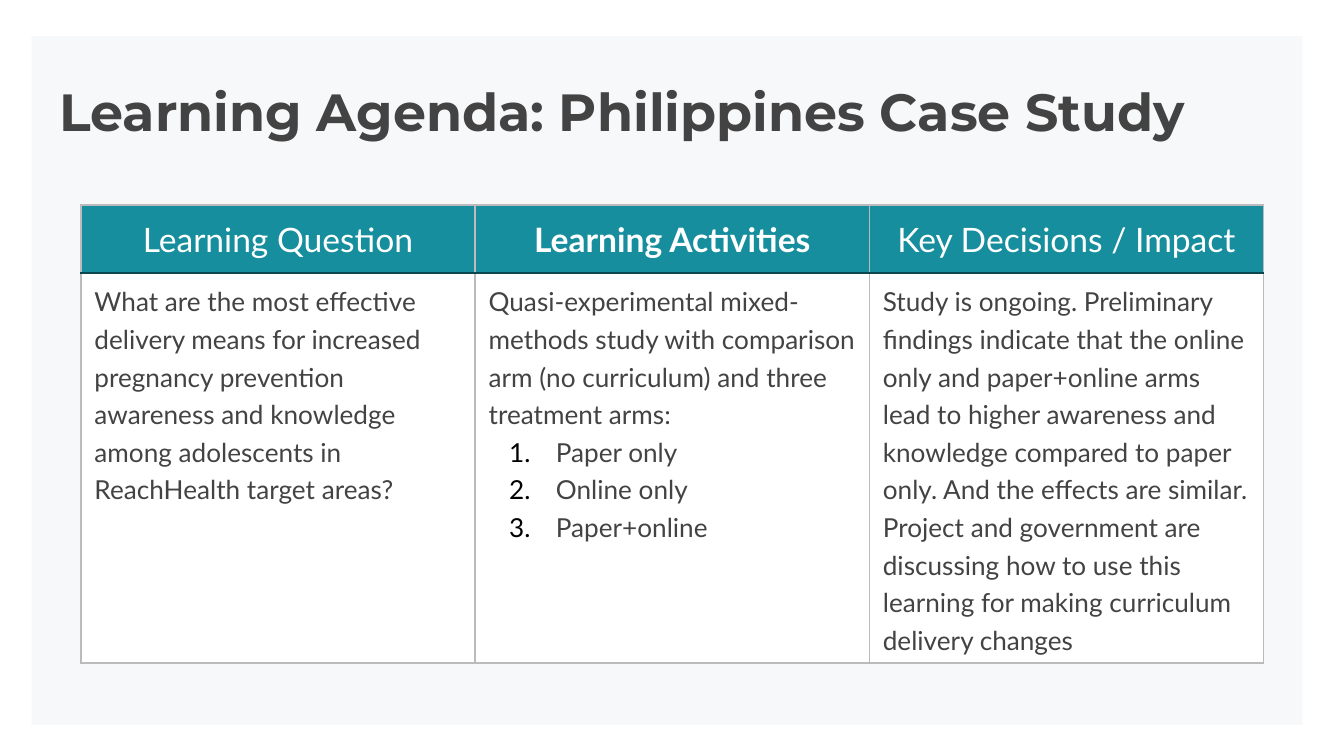
from lxml.etree import SubElement
from pptx import Presentation
from pptx.dml.color import RGBColor
from pptx.enum.shapes import MSO_SHAPE
from pptx.enum.text import MSO_ANCHOR, PP_ALIGN
from pptx.oxml import parse_xml
from pptx.oxml.ns import nsdecls, qn
from pptx.util import Pt

HEADERS = [("Learning Question", False), ("Learning Activities", True),
           ("Key Decisions / Impact", False)]
QUESTION = ("What are the most effective delivery means for increased pregnancy "
            "prevention awareness and knowledge among adolescents in ReachHealth "
            "target areas?")
ACTIVITIES = ("Quasi-experimental mixed-methods study with comparison arm "
              "(no curriculum) and three treatment arms:")
ARMS = ["Paper only", "Online only", "Paper+online"]
IMPACT = ("Study is ongoing. Preliminary findings indicate that the online only and "
          "paper+online arms lead to higher awareness and knowledge compared to paper "
          "only. And the effects are similar. Project and government are discussing "
          "how to use this learning for making curriculum delivery changes")


def color(hex_code):
    return RGBColor.from_string(hex_code)


def write(paragraph, text, *, font, size, ink, bold=False, align=PP_ALIGN.LEFT,
          spacing=None, numbered=False):
    if numbered:
        properties = paragraph._p.get_or_add_pPr()
        properties.set("marL", str(Pt(36)))
        properties.set("indent", str(-Pt(25)))
        bullet_color = SubElement(properties, qn("a:buClr"))
        SubElement(bullet_color, qn("a:srgbClr"), val="000000")
        SubElement(properties, qn("a:buFont"), typeface=font)
        SubElement(properties, qn("a:buAutoNum"), type="arabicPeriod")
    paragraph.alignment = align
    if spacing:
        paragraph.line_spacing = spacing
    run = paragraph.add_run()
    run.text = text
    run.font.name, run.font.size, run.font.bold = font, Pt(size), bold
    run.font.color.rgb = color(ink)


class LearningAgendaSlide:
    INK, TEAL, DEEP_TEAL, GRID = "434343", "168E9E", "0A474F", "BBBBBD"
    HEADING_FONT, BODY_FONT = "Montserrat", "Lato"

    def __init__(self, presentation):
        self.slide = presentation.slides.add_slide(presentation.slide_layouts[6])

    def panel(self, left, top, width, height):
        shape = self.slide.shapes.add_shape(
            MSO_SHAPE.RECTANGLE, Pt(left), Pt(top), Pt(width), Pt(height))
        shape.shadow.inherit = False
        shape.line.fill.background()
        shape.fill.solid()
        shape.fill.fore_color.rgb = color("073763")
        fill_color = shape._element.spPr.find(".//" + qn("a:srgbClr"))
        SubElement(fill_color, qn("a:alpha"), val="3000")

    def title(self, text, left, top, width, height):
        frame = self.slide.shapes.add_textbox(
            Pt(left), Pt(top), Pt(width), Pt(height)).text_frame
        frame.word_wrap = True
        frame.margin_left = frame.margin_right = Pt(7.2)
        frame.margin_top = frame.margin_bottom = Pt(7.2)
        write(frame.paragraphs[0], text, font=self.HEADING_FONT, size=28,
              ink=self.INK, bold=True)

    def table(self, left, top, width, row_heights, columns):
        table = self.slide.shapes.add_table(
            len(row_heights), columns, Pt(left), Pt(top), Pt(width),
            Pt(sum(row_heights))).table
        table.first_row = table.horz_banding = False
        for row, height in zip(table.rows, row_heights):
            row.height = Pt(height)
        return table

    def style_cell(self, cell, fill, **edges):
        """Fill the cell and draw its borders; edges replaces sides of the grid."""
        cell.fill.solid()
        cell.fill.fore_color.rgb = color(fill)
        properties = cell._tc.get_or_add_tcPr()
        for position, side in enumerate("LRTB"):
            ink, weight = edges.get(side, (self.GRID, 1))
            properties.insert(position, parse_xml(
                f'<a:ln{side} {nsdecls("a")} w="{Pt(weight)}"><a:solidFill>'
                f'<a:srgbClr val="{ink}"/></a:solidFill></a:ln{side}>'))

    def header_cell(self, cell, text, bold):
        self.style_cell(cell, self.TEAL, B=(self.DEEP_TEAL, 1.5))
        cell.vertical_anchor = MSO_ANCHOR.MIDDLE
        write(cell.text_frame.paragraphs[0], text, font=self.BODY_FONT, size=18,
              ink="FFFFFF", bold=bold, align=PP_ALIGN.CENTER)

    def body_cell(self, cell, text, numbered_items=()):
        self.style_cell(cell, "FFFFFF", T=(self.DEEP_TEAL, 1.5))
        frame = cell.text_frame
        body = dict(font=self.BODY_FONT, size=14, ink=self.INK, spacing=1.2)
        write(frame.paragraphs[0], text, **body)
        for item in numbered_items:
            write(frame.add_paragraph(), item, numbered=True, **body)


def main():
    presentation = Presentation()
    presentation.slide_width, presentation.slide_height = Pt(720), Pt(405)
    agenda = LearningAgendaSlide(presentation)
    agenda.panel(16.9, 19.4, 681, 369)
    agenda.title("Learning Agenda: Philippines Case Study", 24.8, 35.3, 671, 45.4)
    table = agenda.table(43.4, 109.8, 633.6, (36.5, 197.5), len(HEADERS))
    bodies = [(QUESTION,), (ACTIVITIES, ARMS), (IMPACT,)]
    for column, (header, body) in enumerate(zip(HEADERS, bodies)):
        agenda.header_cell(table.cell(0, column), *header)
        agenda.body_cell(table.cell(1, column), *body)
    presentation.save("out.pptx")


if __name__ == "__main__":
    main()
